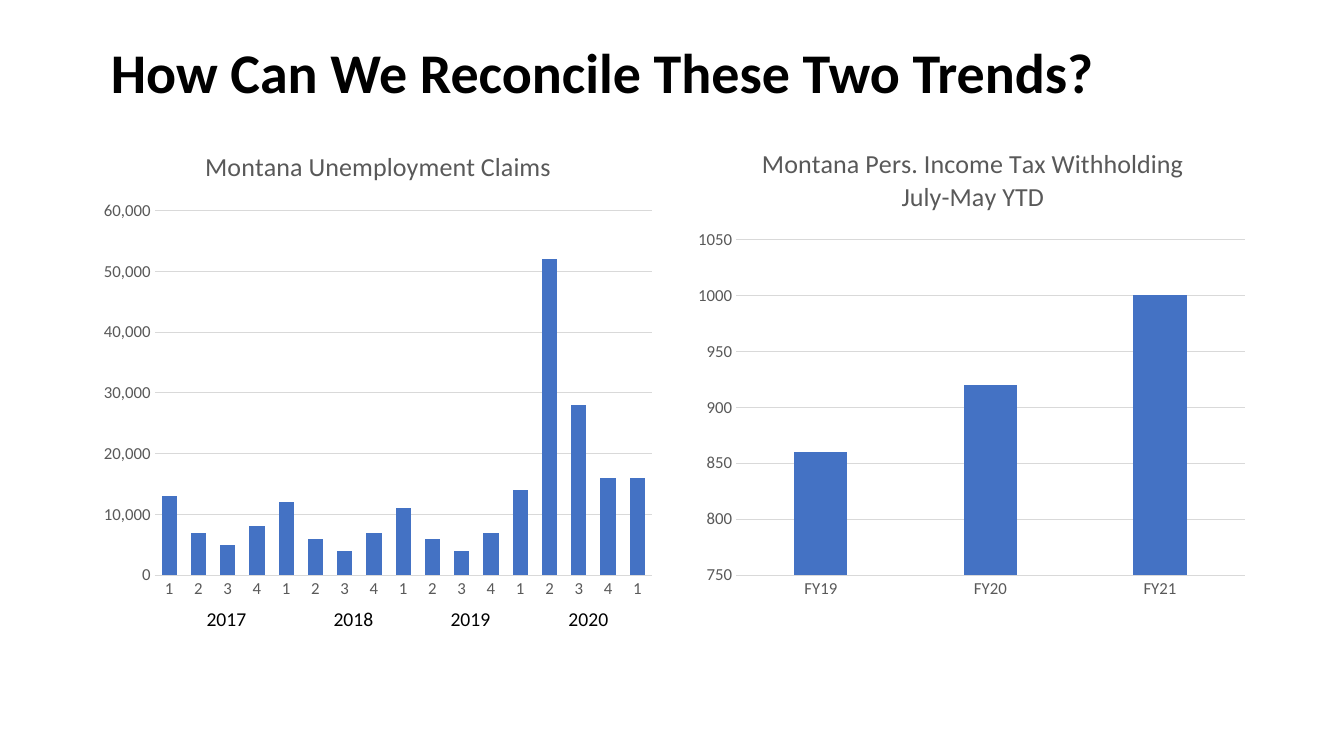
"""Build a slide that sets unemployment claims beside income tax withholding."""
from dataclasses import dataclass

import pptx
import pptx.chart.data
import pptx.dml.color
import pptx.enum.chart
import pptx.enum.text
import pptx.oxml
import pptx.oxml.ns
import pptx.slide
import pptx.text.text
import pptx.util

BLACK = pptx.dml.color.RGBColor(0x00, 0x00, 0x00)
GRAY = pptx.dml.color.RGBColor(0x59, 0x59, 0x59)
LIGHT = pptx.dml.color.RGBColor(0xD9, 0xD9, 0xD9)
BLUE = pptx.dml.color.RGBColor(0x44, 0x72, 0xC4)
FONT = "Calibri"
WIDTH, HEIGHT = pptx.util.Inches(13.33), pptx.util.Inches(7.5)
TOP, CHART_W, CHART_H = 1.28 / 7.5, 5.67 / 13.33, 4.76 / 7.5


@dataclass
class BarChart:
    """A column chart, with its inner places as shares of the chart."""
    left: float
    title: str
    title_at: dict[str, float]
    plot_at: dict[str, float]
    cats: list[str]
    vals: list[int]
    scale: tuple[int, int, int]
    fmt: str
    gap: int
    overlap: int


@dataclass
class YearLabel:
    """A year under the claims chart."""
    text: str
    left: float
    width: float = 0.7 / 13.33


CHARTS = [
    BarChart(0.91 / 13.33, "Montana Unemployment Claims",
             {"x": 0.19, "y": 0.03},
             {"x": 0.11, "y": 0.17, "w": 0.87, "h": 0.76},
             [str(i % 4 + 1) for i in range(17)],
             [13000, 7000, 5000, 8000, 12000, 6000, 4000, 7000, 11000,
              6000, 4000, 7000, 14000, 52000, 28000, 16000, 16000],
             (0, 60000, 10000), "#,##0", 91, 42),
    BarChart(6.79 / 13.33,
             "Montana Pers. Income Tax Withholding\nJuly-May YTD",
             {"x": 0.13, "y": 0.03},
             {"x": 0.09, "y": 0.23, "w": 0.89, "h": 0.7},
             ["FY19", "FY20", "FY21"], [860, 920, 1000],
             (750, 1050, 50), "General", 219, -27),
]
YEARS = [
    YearLabel("2017", 1.95 / 13.33, 0.79 / 13.33),
    YearLabel("2018", 3.21 / 13.33),
    YearLabel("2019", 4.37 / 13.33),
    YearLabel("2020", 5.54 / 13.33),
]


def box(x: float, y: float, w: float, h: float) -> tuple[int, int, int, int]:
    """Turn shares of the slide into lengths."""
    return int(x * WIDTH), int(y * HEIGHT), int(w * WIDTH), int(h * HEIGHT)


def style(font: pptx.text.text.Font, size: float,
          color: pptx.dml.color.RGBColor, bold: bool = False) -> None:
    """Set the look of a font."""
    font.name, font.size, font.bold = FONT, pptx.util.Pt(size), bold
    font.color.rgb = color


def set_layout(parent: pptx.oxml.xmlchemy.BaseOxmlElement,
               places: dict[str, float], inner: bool = False) -> None:
    """Place a chart title or plot area by shares of the chart."""
    for old in parent.findall(pptx.oxml.ns.qn("c:layout")):
        parent.remove(old)
    target = '<c:layoutTarget val="inner"/>' if inner else ""
    modes = "".join(f'<c:{k}Mode val="edge"/>' for k in "xy")
    vals = "".join(f'<c:{k} val="{v}"/>' for k, v in places.items())
    layout = pptx.oxml.parse_xml(
        f'<c:layout {pptx.oxml.ns.nsdecls("c")}><c:manualLayout>'
        f"{target}{modes}{vals}</c:manualLayout></c:layout>")
    tx = parent.find(pptx.oxml.ns.qn("c:tx"))
    if tx is None:
        parent.insert(0, layout)
    else:
        tx.addnext(layout)


def add_bars(s: pptx.slide.Slide, spec: BarChart) -> None:
    """Draw a column chart."""
    data = pptx.chart.data.CategoryChartData()
    data.categories = spec.cats
    data.add_series("Series 1", spec.vals)
    chart = s.shapes.add_chart(
        pptx.enum.chart.XL_CHART_TYPE.COLUMN_CLUSTERED,
        *box(spec.left, TOP, CHART_W, CHART_H), data).chart
    style(chart.font, 10, BLACK)
    chart.has_legend = False
    tf = chart.chart_title.text_frame
    tf.text = spec.title
    for p in tf.paragraphs:
        style(p.font, 18.6, GRAY)
    chart.chart_title.include_in_layout = False
    set_layout(chart.chart_title._element, spec.title_at)
    plot = chart.plots[0]
    set_layout(plot._element.getparent(), spec.plot_at, inner=True)
    plot.gap_width, plot.overlap = spec.gap, spec.overlap
    plot.vary_by_categories = False
    fill = plot.series[0].format.fill
    fill.solid()
    fill.fore_color.rgb = BLUE
    cat, val = chart.category_axis, chart.value_axis
    for axis in (cat, val):
        axis.major_tick_mark = pptx.enum.chart.XL_TICK_MARK.NONE
        axis.minor_tick_mark = pptx.enum.chart.XL_TICK_MARK.NONE
        style(axis.tick_labels.font, 12, GRAY)
    for line in (cat.format.line, val.major_gridlines.format.line):
        line.color.rgb = LIGHT
        line.width = pptx.util.Pt(0.75)
    val.format.line.fill.background()
    val.minimum_scale, val.maximum_scale, val.major_unit = spec.scale
    val.tick_labels.number_format = spec.fmt
    val.tick_labels.number_format_is_linked = False


def add_year(s: pptx.slide.Slide, year: YearLabel) -> None:
    """Write a year label."""
    tf = s.shapes.add_textbox(
        *box(year.left, 5.97 / 7.5, year.width, 0.34 / 7.5)).text_frame
    tf.word_wrap = True
    tf.auto_size = pptx.enum.text.MSO_AUTO_SIZE.SHAPE_TO_FIT_TEXT
    tf.text = year.text
    style(tf.paragraphs[0].font, 14, BLACK)


def add_title(s: pptx.slide.Slide, text: str) -> None:
    """Place and format the slide title."""
    sp = s.shapes.title
    sp.left, sp.top, sp.width, sp.height = box(
        1 / 13.33, 0.12 / 7.5, 11.67 / 13.33, 1.25 / 7.5)
    tf = sp.text_frame
    tf.text = text
    tf.auto_size = pptx.enum.text.MSO_AUTO_SIZE.NONE
    tf.vertical_anchor = pptx.enum.text.MSO_ANCHOR.MIDDLE
    p = tf.paragraphs[0]
    p.alignment = pptx.enum.text.PP_ALIGN.LEFT
    p.line_spacing = 0.9
    style(p.font, 40, BLACK, bold=True)


def main() -> None:
    """Build and save the slide."""
    prs = pptx.Presentation()
    prs.slide_width, prs.slide_height = WIDTH, HEIGHT
    s = prs.slides.add_slide(prs.slide_layouts[5])
    add_title(s, "How Can We Reconcile These Two Trends?")
    for spec in CHARTS:
        add_bars(s, spec)
    for year in YEARS:
        add_year(s, year)
    prs.save("out.pptx")


if __name__ == "__main__":
    main()
